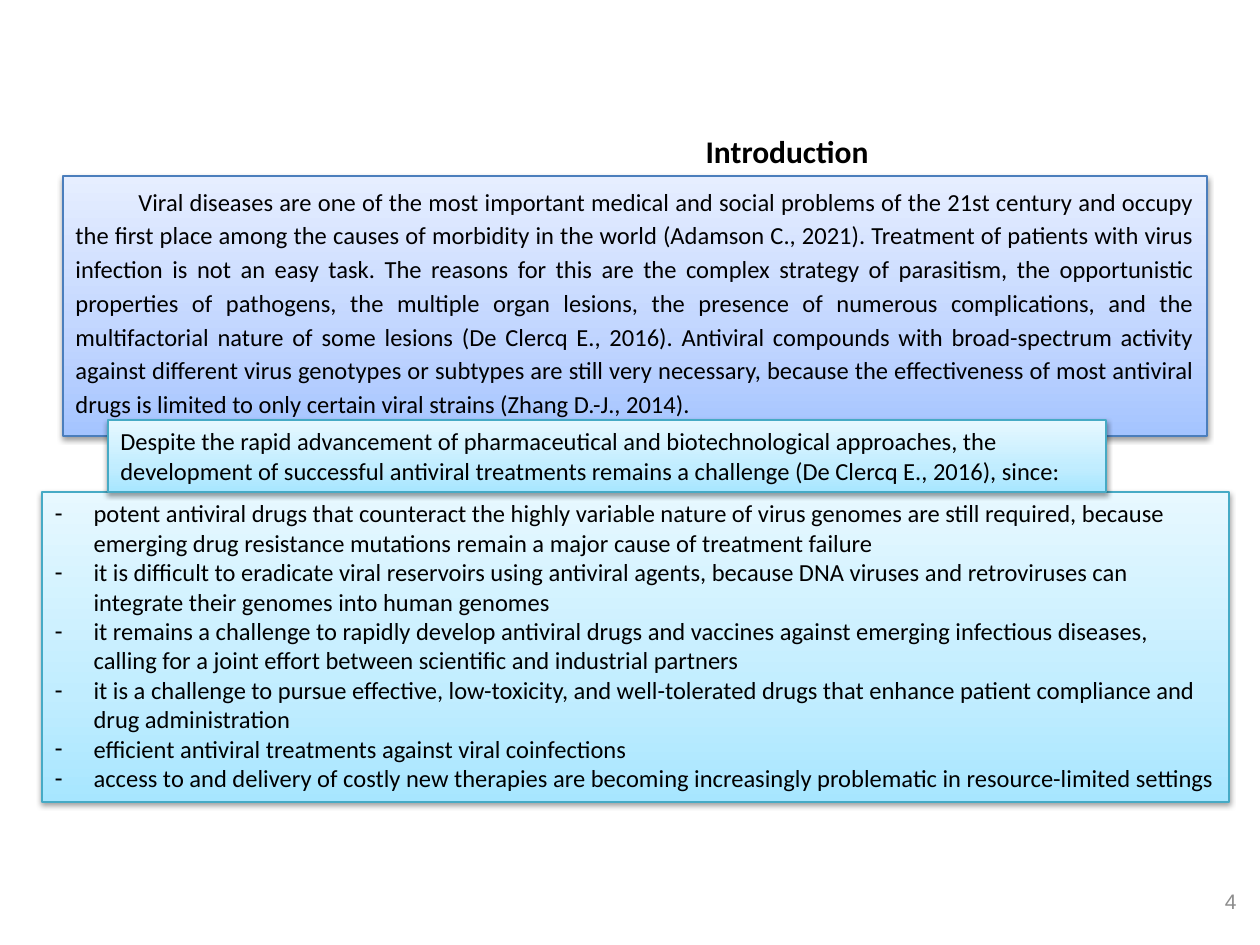
import copy

import pptx
import pptx.dml.color
import pptx.enum.shapes
import pptx.enum.text
import pptx.oxml
import pptx.oxml.ns
import pptx.util

RGB = pptx.dml.color.RGBColor
ALIGN = pptx.enum.text.PP_ALIGN
ANCHOR = pptx.enum.text.MSO_ANCHOR
PX = 914400 // 126

BLACK = RGB(0x00, 0x00, 0x00)
GREY = RGB(0x8C, 0x8C, 0x8C)
BLUE_EDGE = RGB(0x4B, 0x7E, 0xBC)
AQUA_EDGE = RGB(0x46, 0xAA, 0xC5)
BLUES = [RGB(0xA4, 0xC4, 0xFF), RGB(0xBF, 0xD4, 0xFF), RGB(0xE6, 0xEE, 0xFF)]
AQUAS = [RGB(0xA7, 0xE6, 0xFF), RGB(0xC1, 0xED, 0xFF), RGB(0xE7, 0xF8, 0xFF)]
STOPS = [0, 0.35, 1]

PLAIN = {"name": "Calibri", "size": pptx.util.Pt(14), "bold": False}
HEAD = {"name": "Calibri", "size": pptx.util.Pt(18), "bold": True}
SMALL = {"name": "Arial", "size": pptx.util.Pt(12), "bold": False}

SHADOW = (
    f'<a:outerShdw {pptx.oxml.ns.nsdecls("a")} blurRad="40000" dist="20000" '
    'dir="5400000" rotWithShape="0"><a:srgbClr val="000000">'
    '<a:alpha val="38000"/></a:srgbClr></a:outerShdw>'
)

INTRO = (
    "Viral diseases are one of the most important medical and social problems "
    "of the 21st century and occupy the first place among the causes of "
    "morbidity in the world (Adamson C., 2021). Treatment of patients with "
    "virus infection is not an easy task. The reasons for this are the complex "
    "strategy of parasitism, the opportunistic properties of pathogens, the "
    "multiple organ lesions, the presence of numerous complications, and the "
    "multifactorial nature of some lesions (De Clercq E., 2016). Antiviral "
    "compounds with broad-spectrum activity against different virus genotypes "
    "or subtypes are still very necessary, because the effectiveness of most "
    "antiviral drugs is limited to only certain viral strains "
    "(Zhang D.-J., 2014)."
)
LEAD = (
    "Despite the rapid advancement of pharmaceutical and biotechnological "
    "approaches, the development of successful antiviral treatments remains a "
    "challenge (De Clercq E., 2016), since:"
)
NEEDS = [
    "potent antiviral drugs that counteract the highly variable nature of "
    "virus genomes are still required, because emerging drug resistance "
    "mutations remain a major cause of treatment failure",
    "it is difficult to eradicate viral reservoirs using antiviral agents, "
    "because DNA viruses and retroviruses can integrate their genomes into "
    "human genomes",
    "it remains a challenge to rapidly develop antiviral drugs and vaccines "
    "against emerging infectious diseases, calling for a joint effort between "
    "scientific and industrial partners",
    "it is a challenge to pursue effective, low-toxicity, and well-tolerated "
    "drugs that enhance patient compliance and drug administration",
    "efficient antiviral treatments against viral coinfections",
    "access to and delivery of costly new therapies are becoming increasingly "
    "problematic in resource-limited settings",
]


def place(shape, *box):
    for name, val in zip(("left", "top", "width", "height"), box):
        setattr(shape, name, val * PX)


def write(shape, lines, font, color=BLACK, align=ALIGN.LEFT, anchor=ANCHOR.TOP):
    frame = shape.text_frame
    frame.text = "\n".join(lines)
    frame.word_wrap = True
    frame.auto_size = pptx.enum.text.MSO_AUTO_SIZE.NONE
    frame.vertical_anchor = anchor
    for para in frame.paragraphs:
        para.alignment = align
        para.space_before = pptx.util.Pt(0)
        for run in para.runs:
            for name, val in font.items():
                setattr(run.font, name, val)
            run.font.color.rgb = color


def indent(para, left, first):
    props = para._p.get_or_add_pPr()
    props.set("marL", str(left * PX))
    props.set("indent", str(first * PX))
    return props


def dash(para):
    """Give the paragraph a hanging dash as its bullet."""
    props = indent(para, 39, -39)
    mark = pptx.oxml.parse_xml(f'<a:buChar {pptx.oxml.ns.nsdecls("a")} char="-"/>')
    props.append(mark)


def panel(shape, colors, edge):
    """Apply the upward gradient, thin edge and soft shadow."""
    fill = shape.fill
    fill.gradient()
    fill.gradient_angle = 90
    props = shape._element.spPr
    stops = props.find(".//" + pptx.oxml.ns.qn("a:gsLst"))
    stops.append(copy.deepcopy(stops[0]))
    for stop, pos, color in zip(fill.gradient_stops, STOPS, colors):
        stop.position = pos
        stop.color.rgb = color
    shape.line.color.rgb = edge
    shape.line.width = pptx.util.Pt(0.75)
    shape.shadow.inherit = False
    effects = props.find(pptx.oxml.ns.qn("a:effectLst"))
    effects.append(pptx.oxml.parse_xml(SHADOW))


def add_rect(slide, *box):
    kind = pptx.enum.shapes.MSO_SHAPE.RECTANGLE
    return slide.shapes.add_shape(kind, *(val * PX for val in box))


def main():
    deck = pptx.Presentation()
    deck.slide_width = pptx.util.Inches(10)
    deck.slide_height = pptx.util.Inches(7.5)
    slide = deck.slides.add_slide(deck.slide_layouts[1])

    title = slide.shapes.title
    place(title, 693, 126, 341, 50)
    write(title, ["Introduction"], HEAD)

    needs = slide.placeholders[1]
    place(needs, 42, 492, 1187, 310)
    panel(needs, AQUAS, AQUA_EDGE)
    write(needs, NEEDS, PLAIN)
    for para in needs.text_frame.paragraphs:
        dash(para)

    intro = add_rect(slide, 63, 176, 1144, 260)
    panel(intro, BLUES, BLUE_EDGE)
    write(intro, [INTRO], PLAIN, align=ALIGN.JUSTIFY)
    para = intro.text_frame.paragraphs[0]
    para.line_spacing = 1.15
    indent(para, 0, 63)

    lead = add_rect(slide, 108, 420, 998, 72)
    panel(lead, AQUAS, AQUA_EDGE)
    write(lead, [LEAD], PLAIN)

    number = slide.shapes.add_textbox(*(val * PX for val in (955, 876, 294, 50)))
    write(number, ["4"], SMALL, GREY, ALIGN.RIGHT, ANCHOR.MIDDLE)

    deck.save("out.pptx")


if __name__ == "__main__":
    main()
